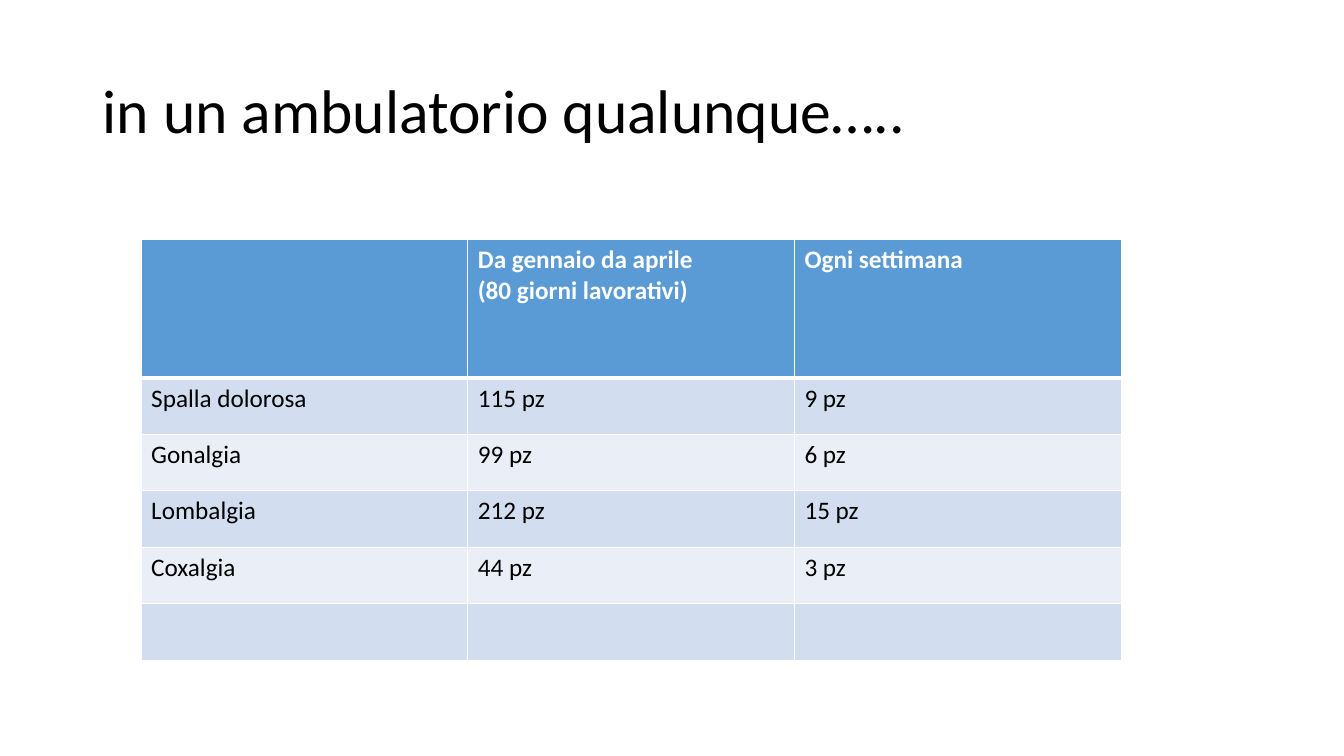
from dataclasses import dataclass

from lxml.etree import SubElement
from pptx import Presentation
from pptx.dml.color import RGBColor
from pptx.enum.text import MSO_ANCHOR, MSO_AUTO_SIZE, PP_ALIGN
from pptx.oxml.ns import qn
from pptx.slide import Slide
from pptx.table import _Cell
from pptx.text.text import TextFrame
from pptx.util import Inches, Pt

WHITE = RGBColor(0xFF, 0xFF, 0xFF)
BLACK = RGBColor(0x00, 0x00, 0x00)
HEADER_BLUE = RGBColor(0x5B, 0x9B, 0xD5)
BAND_DARK = RGBColor(0xD2, 0xDE, 0xEF)
BAND_LIGHT = RGBColor(0xEA, 0xEF, 0xF7)

COLUMN_WIDTH = Inches(3.24)
HEADER_HEIGHT = Inches(1.37)
BODY_HEIGHT = Inches(0.56)


@dataclass(frozen=True)
class RowStyle:
    fill: RGBColor
    color: RGBColor
    bold: bool
    bottom_border: float


HEADER = RowStyle(HEADER_BLUE, WHITE, True, 3)
BANDS = (RowStyle(BAND_DARK, BLACK, False, 1), RowStyle(BAND_LIGHT, BLACK, False, 1))

PATIENT_ROWS = (
    ("", "Da gennaio da aprile\n(80 giorni lavorativi)", "Ogni settimana"),
    ("Spalla dolorosa", "115 pz", "9 pz"),
    ("Gonalgia", "99 pz", "6 pz"),
    ("Lombalgia", "212 pz", "15 pz"),
    ("Coxalgia", "44 pz", "3 pz"),
    ("", "", ""),
)


def format_text(frame: TextFrame, size: float, color: RGBColor, bold: bool = False) -> None:
    for para in frame.paragraphs:
        for name, value in {"name": "Calibri", "size": Pt(size), "bold": bold}.items():
            setattr(para.font, name, value)
        for span in para.runs:
            span.font.color.rgb = color


def add_borders(cell: _Cell, widths: dict[str, float]) -> None:
    """Draw white cell borders; call before the fill is set, as the schema orders them."""
    properties = cell._tc.get_or_add_tcPr()
    for side, width in widths.items():
        line = SubElement(properties, qn(f"a:ln{side}"), w=str(Pt(width)))
        fill = SubElement(line, qn("a:solidFill"))
        SubElement(fill, qn("a:srgbClr"), val=str(WHITE))


def add_title(page: Slide, text: str) -> None:
    title = page.shapes.title
    box = {"left": 0.92, "top": 0.4, "width": 11.5, "height": 1.45}
    for name, value in box.items():
        setattr(title, name, Inches(value))
    frame = title.text_frame
    frame.text = text
    frame.auto_size = MSO_AUTO_SIZE.NONE
    frame.vertical_anchor = MSO_ANCHOR.MIDDLE
    frame.paragraphs[0].alignment = PP_ALIGN.LEFT
    frame.paragraphs[0].line_spacing = 0.9
    format_text(frame, 44, BLACK)


def add_patient_table(page: Slide) -> None:
    row_count, column_count = len(PATIENT_ROWS), len(PATIENT_ROWS[0])
    table = page.shapes.add_table(
        row_count, column_count, Inches(1.4), Inches(2.38),
        COLUMN_WIDTH * column_count, HEADER_HEIGHT + BODY_HEIGHT * (row_count - 1),
    ).table
    for column in table.columns:
        column.width = COLUMN_WIDTH
    for index, texts in enumerate(PATIENT_ROWS):
        style = BANDS[(index - 1) % 2] if index else HEADER
        top_border = 3 if index == 1 else 1
        table.rows[index].height = BODY_HEIGHT if index else HEADER_HEIGHT
        for cell, text in zip(table.rows[index].cells, texts):
            cell.text = text
            format_text(cell.text_frame, 18, style.color, style.bold)
            add_borders(cell, {"L": 1, "R": 1, "T": top_border, "B": style.bottom_border})
            cell.fill.solid()
            cell.fill.fore_color.rgb = style.fill


def main() -> None:
    deck = Presentation()
    deck.slide_width, deck.slide_height = Inches(13.33), Inches(7.5)
    page = deck.slides.add_slide(deck.slide_layouts[5])
    add_title(page, "in un ambulatorio qualunque…..")
    add_patient_table(page)
    deck.save("out.pptx")


if __name__ == "__main__":
    main()
